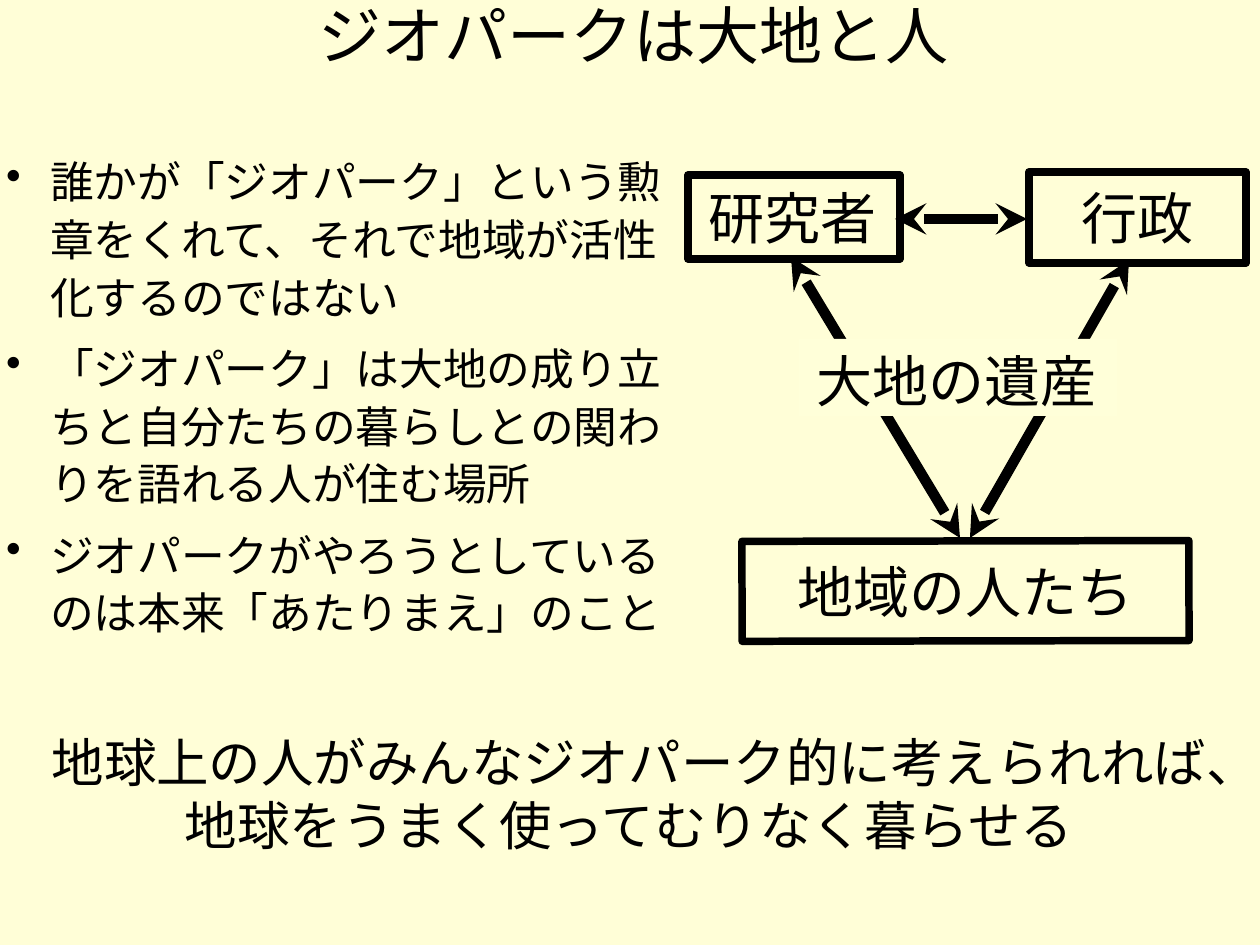
import pptx
import pptx.util
import pptx.dml.color
import pptx.enum.lang
import pptx.enum.shapes
import pptx.enum.text
import pptx.oxml
import pptx.oxml.ns

BLACK = pptx.dml.color.RGBColor(0x00, 0x00, 0x00)
CREAM = pptx.dml.color.RGBColor(0xFF, 0xFE, 0xD7)
LABEL_CREAM = pptx.dml.color.RGBColor(0xFF, 0xFF, 0xD9)
CENTER = pptx.enum.text.PP_ALIGN.CENTER
LEFT = pptx.enum.text.PP_ALIGN.LEFT
TOP = pptx.enum.text.MSO_ANCHOR.TOP
MIDDLE = pptx.enum.text.MSO_ANCHOR.MIDDLE


def px(length):
    return pptx.util.Emu(round(length * 914400 / 126))


def element(tag, **attributes):
    node = pptx.oxml.parse_xml(f"<a:{tag} {pptx.oxml.ns.nsdecls('a')}/>")
    for name, value in attributes.items():
        node.set(name, value)
    return node


class SlideBuilder:
    font_name = "Noto Sans CJK JP"
    box_line = pptx.util.Pt(4.27)
    arrow_line = pptx.util.Pt(6)
    bullet_indent = 44

    def __init__(self, deck):
        self.page = deck.slides.add_slide(deck.slide_layouts[6])
        fill = self.page.background.fill
        fill.solid()
        fill.fore_color.rgb = CREAM

    def style(self, para, size, align, spacing=None, before=0):
        para.alignment = align
        para.line_spacing = spacing
        para.space_before = pptx.util.Pt(before)
        font = para.font
        font.size = pptx.util.Pt(size)
        font.name = self.font_name
        font.color.rgb = BLACK
        font.language_id = pptx.enum.lang.MSO_LANGUAGE_ID.JAPANESE
        latin = para._p.pPr.find(".//" + pptx.oxml.ns.qn("a:latin"))
        latin.addnext(element("ea", typeface=self.font_name))

    def frame(self, shape, anchor, insets):
        frame = shape.text_frame
        frame.word_wrap = True
        frame.vertical_anchor = anchor
        left, top, right, bottom = map(px, insets)
        frame.margin_left, frame.margin_top = left, top
        frame.margin_right, frame.margin_bottom = right, bottom
        return frame

    def text(self, bounds, lines, size, align=CENTER, anchor=TOP,
             insets=(8, 8, 11, 8), spacing=None, gap=0):
        box = self.page.shapes.add_textbox(*map(px, bounds))
        frame = self.frame(box, anchor, insets)
        frame.text = "\n".join(lines)
        for index, para in enumerate(frame.paragraphs):
            self.style(para, size, align, spacing, gap if index else 0)
        return frame

    def bullets(self, bounds, lines, size):
        frame = self.text(bounds, lines, size, LEFT, insets=(8, 8, 4, 8),
                          spacing=1.1, gap=7.7)
        for para in frame.paragraphs:
            properties = para._p.pPr
            properties.set("marL", str(px(self.bullet_indent)))
            properties.set("indent", str(px(-self.bullet_indent)))
            color = element("buClr")
            color.append(element("srgbClr", val=str(BLACK)))
            default = properties.find(pptx.oxml.ns.qn("a:defRPr"))
            default.addprevious(color)
            default.addprevious(element("buChar", char="•"))

    def box(self, bounds, text, fill=None, anchor=MIDDLE,
            insets=(4, 0, 4, 0), rotation=0):
        kind = pptx.enum.shapes.MSO_SHAPE.RECTANGLE
        box = self.page.shapes.add_shape(kind, *map(px, bounds))
        box.shadow.inherit = False
        box.rotation = rotation
        if fill is None:
            box.fill.background()
            box.line.color.rgb = BLACK
            box.line.width = self.box_line
        else:
            box.fill.solid()
            box.fill.fore_color.rgb = fill
            box.line.fill.background()
        frame = self.frame(box, anchor, insets)
        frame.text = text
        self.style(frame.paragraphs[0], 32, CENTER, before=11.6)

    def arrow(self, start, end):
        kind = pptx.enum.shapes.MSO_CONNECTOR.STRAIGHT
        arrow = self.page.shapes.add_connector(kind, *map(px, start + end))
        arrow.line.color.rgb = BLACK
        arrow.line.width = self.arrow_line
        properties = arrow._element.spPr
        outline = properties.find(pptx.oxml.ns.qn("a:ln"))
        for tag in ("headEnd", "tailEnd"):
            outline.append(element(tag, type="stealth"))
        properties.append(element("effectLst"))


def main():
    deck = pptx.Presentation()
    deck.slide_width, deck.slide_height = px(1260), px(945)
    builder = SlideBuilder(deck)

    builder.arrow((791, 257), (960, 538))
    builder.text((123, 8, 1018, 156), ["ジオパークは大地と人\v"], 36,
                 anchor=MIDDLE, insets=(8, 8, 4, 8), spacing=0.5)
    builder.bullets((-2, 142, 687, 776), [
        "誰かが「ジオパーク」という勲章をくれて、それで地域が活性化するのではない",
        "「ジオパーク」は大地の成り立ちと自分たちの暮らしとの関わりを語れる人が住む場所",
        "ジオパークがやろうとしているのは本来「あたりまえ」のこと",
    ], 25)
    builder.box((688, 175, 212, 84), "研究者", insets=(8, 8, 11, 8))
    builder.box((1029, 172, 217, 91), "行政")
    builder.box((742, 541, 447, 100), "地域の人たち", rotation=-0.1)
    builder.text((30, 722, 1201, 178), [
        "地球上の人がみんなジオパーク的に考えられれば、",
        "地球をうまく使ってむりなく暮らせる",
    ], 30)
    builder.arrow((1129, 260), (970, 538))
    builder.arrow((1027, 219), (895, 219))
    builder.box((799, 339, 318, 77), "大地の遺産", LABEL_CREAM, TOP, (8, 8, 11, 8))

    deck.save("out.pptx")


if __name__ == "__main__":
    main()
